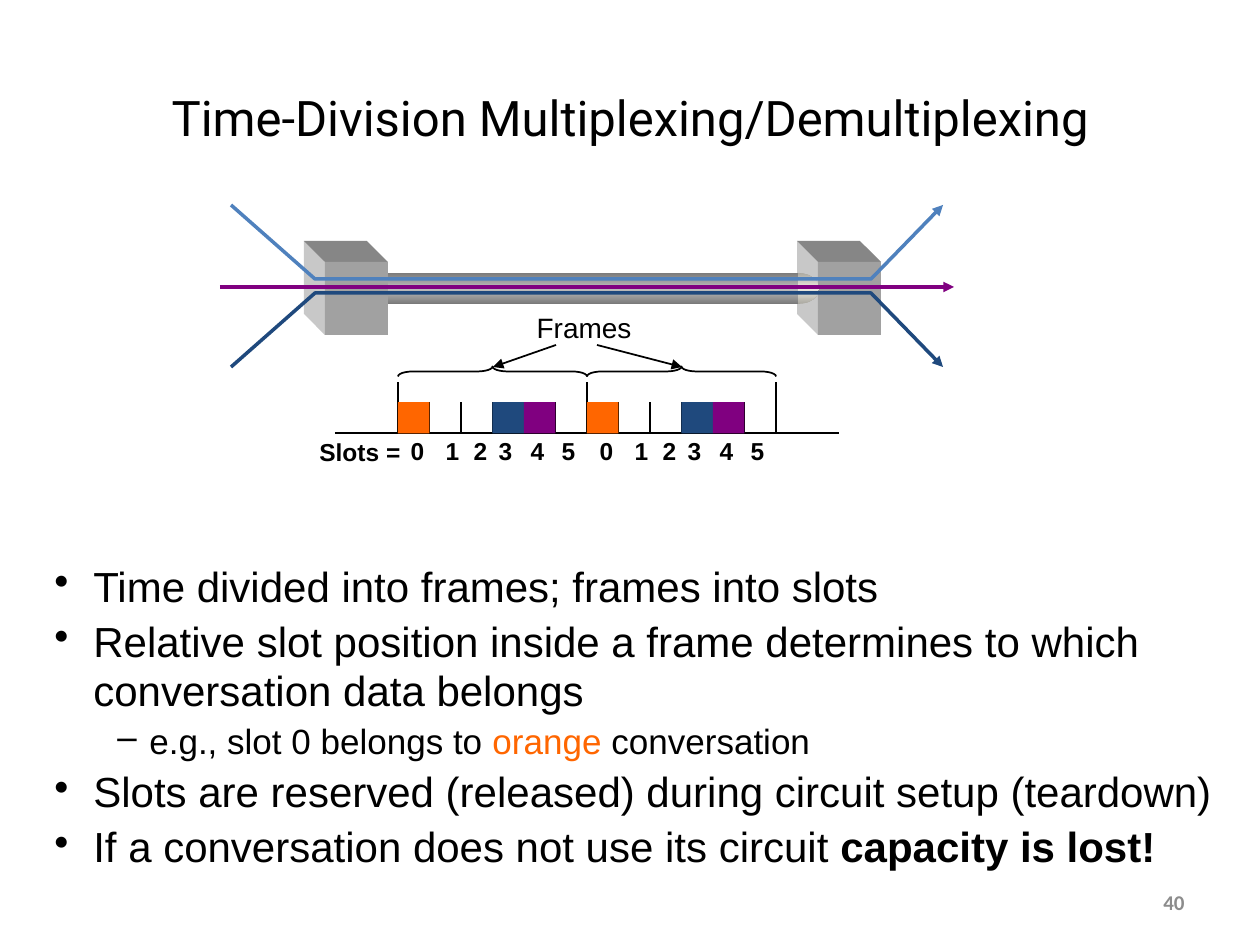
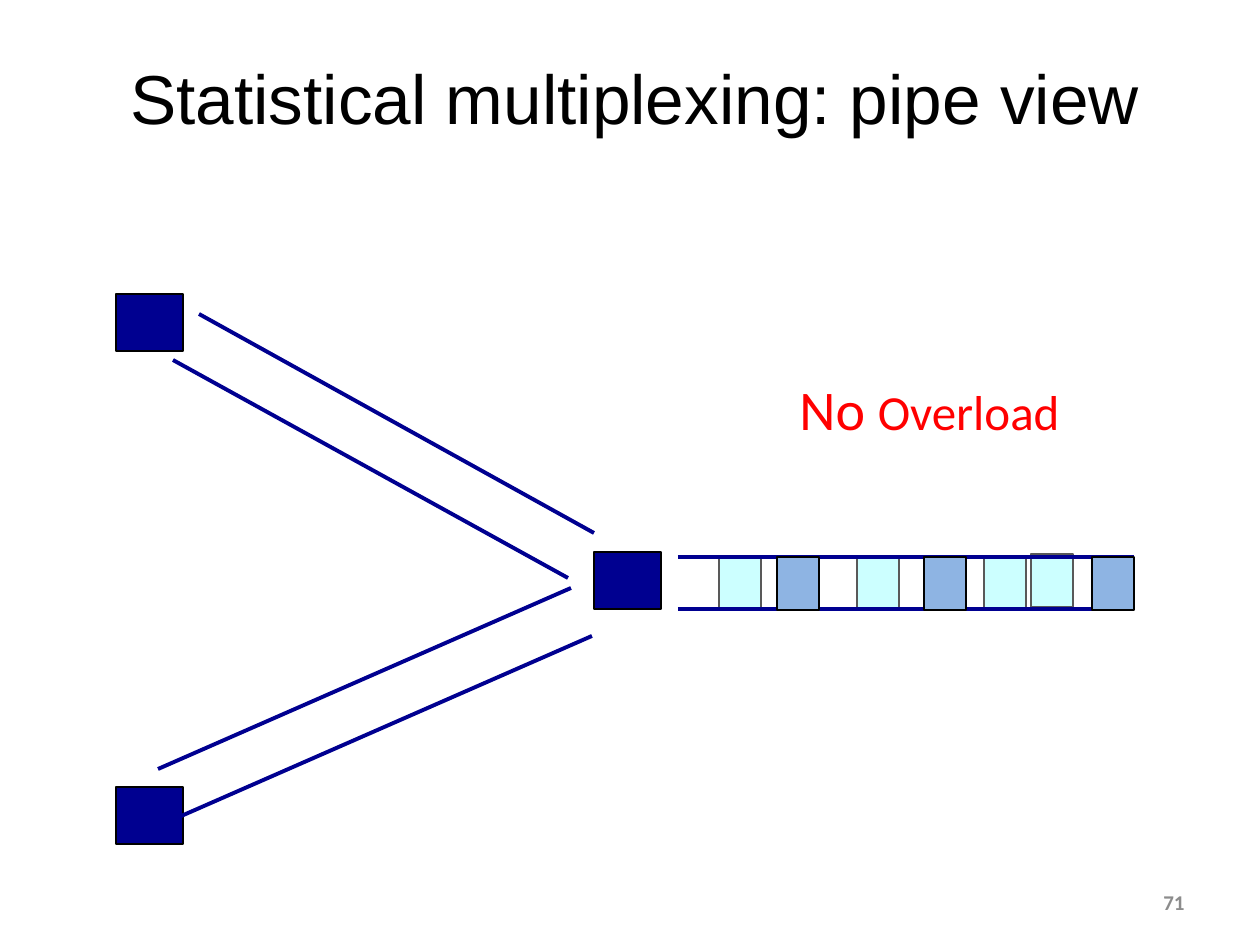
from lxml import etree
from pptx import Presentation
from pptx.dml.color import RGBColor
from pptx.enum.shapes import MSO_CONNECTOR, MSO_SHAPE
from pptx.enum.text import MSO_ANCHOR, PP_ALIGN
from pptx.oxml.ns import qn
from pptx.util import Emu, Pt

PX = 914400 / 126
BLANK_LAYOUT = 6
RECT, OVAL, BRACE = MSO_SHAPE.RECTANGLE, MSO_SHAPE.OVAL, MSO_SHAPE.LEFT_BRACE
STRAIGHT = MSO_CONNECTOR.STRAIGHT
LEFT, CENTER, RIGHT = PP_ALIGN.LEFT, PP_ALIGN.CENTER, PP_ALIGN.RIGHT
TOP, MIDDLE = MSO_ANCHOR.TOP, MSO_ANCHOR.MIDDLE

COLORS = {
    "black": "000000", "number": "8C8C8C", "red": "FF0000",
    "orange": "FF6600", "purple": "800080", "blue": "4F81BD",
    "dark blue": "1F497D", "navy": "000090",
    "cyan": "CCFFFF", "cyan edge": "595959", "sky": "8EB4E3",
    "cube front": "A1A1A1", "cube side": "C8C8C8", "cube top": "868686",
    "pipe edge": "7A7A7A", "pipe middle": "C0C0C0",
    "end edge": "AAA8A0", "end middle": "EEECE1",
}


def px(length):
    return Emu(round(length * PX))


def rgb(name):
    return RGBColor.from_string(COLORS[name])


# Elements
def style_line(shape, color, width, arrow=False):
    if color is None:
        shape.line.fill.background()
        return
    shape.line.color.rgb = rgb(color)
    shape.line.width = Pt(width)
    if arrow:
        outline = shape._element.spPr.find(qn("a:ln"))
        etree.SubElement(outline, qn("a:tailEnd"), type="triangle")


def add_line(page, start, end, color="black", width=1, arrow=False):
    line = page.shapes.add_connector(STRAIGHT, *map(px, start + end))
    style_line(line, color, width, arrow)
    etree.SubElement(line._element.spPr, qn("a:effectLst"))


def add_box(page, kind, area, fill=None, edge=None, width=0.75):
    box = page.shapes.add_shape(kind, *map(px, area))
    box.shadow.inherit = False
    if fill:
        box.fill.solid()
        box.fill.fore_color.rgb = rgb(fill)
    else:
        box.fill.background()
    style_line(box, edge, width)
    return box


def add_tube(page, kind, area, edge, middle):
    """Shape shaded from edge colour to middle colour and back."""
    tube = add_box(page, kind, area)
    tube.fill.gradient()
    tube.fill.gradient_angle = 90
    stops = tube._element.spPr.find(qn("a:gradFill")).find(qn("a:gsLst"))
    stops.clear()
    for position, name in ((0, edge), (50000, middle), (100000, edge)):
        stop = etree.SubElement(stops, qn("a:gs"), pos=str(position))
        etree.SubElement(stop, qn("a:srgbClr"), val=COLORS[name])


def add_outline(page, points, fill=None, edge=None, arrow=False):
    builder = page.shapes.build_freeform(*points[0], scale=PX)
    builder.add_line_segments(points[1:], close=fill is not None)
    outline = builder.convert_to_shape()
    outline.shadow.inherit = False
    if fill:
        outline.fill.solid()
        outline.fill.fore_color.rgb = rgb(fill)
    else:
        outline.fill.background()
    style_line(outline, edge, 2, arrow)


def add_cube(page, x, y):
    width, height, depth = 63, 73, 21
    back_x, back_y = x - depth, y - depth
    add_outline(page, [(x, y), (back_x, back_y), (back_x, back_y + height),
                       (x, y + height)], "cube side")
    add_outline(page, [(x, y), (back_x, back_y), (back_x + width, back_y),
                       (x + width, y)], "cube top")
    add_box(page, RECT, (x, y, width, height), "cube front")


def set_font(font, size, name, color="black", bold=False):
    font.size = Pt(size)
    font.name = name
    font.color.rgb = rgb(color)
    font.bold = bold


def add_frame(page, area, anchor=TOP, wrap=True):
    frame = page.shapes.add_textbox(*map(px, area)).text_frame
    frame.word_wrap = wrap
    frame.vertical_anchor = anchor
    return frame


def add_text(page, area, text, size, name, color="black", bold=False,
             align=CENTER, anchor=TOP, wrap=True):
    para = add_frame(page, area, anchor, wrap).paragraphs[0]
    para.text = text
    para.alignment = align
    set_font(para.font, size, name, color, bold)
    return para


def add_bullets(page, area, items):
    """Each item is (level, spans); a span is (text, colour, bold)."""
    frame = add_frame(page, area)
    for index, (level, spans) in enumerate(items):
        para = frame.add_paragraph() if index else frame.paragraphs[0]
        size, margin, hang, mark = ((24, 39, 39, "•"), (20, 95, 32, "–"))[level]
        para.level = level
        para.alignment = LEFT
        para.line_spacing = 0.97
        para.space_before = Pt(3.4)
        properties = para._p.get_or_add_pPr()
        properties.set("marL", str(px(margin)))
        properties.set("indent", str(-px(hang)))
        etree.SubElement(properties, qn("a:buChar"), char=mark)
        set_font(para.font, size, "Arial")
        for text, color, bold in spans:
            span = para.add_run()
            span.text = text
            if color != "black":
                span.font.color.rgb = rgb(color)
            if bold:
                span.font.bold = True


def add_page(deck, title, area, size, name, number):
    page = deck.slides.add_slide(deck.slide_layouts[BLANK_LAYOUT])
    add_text(page, area, title, size, name, anchor=MIDDLE)
    add_text(page, (903, 877, 294, 50), number, 12, "Calibri", "number", True,
             RIGHT, MIDDLE)
    return page


# Time-division slide
def draw_shared_pipe(page):
    add_cube(page, 818, 262)
    add_tube(page, OVAL, (777, 273, 42, 31), "end edge", "end middle")
    add_tube(page, RECT, (367, 273, 431, 31), "pipe edge", "pipe middle")
    add_cube(page, 325, 262)
    for outer_y, inner_y, color in ((205, 279, "blue"), (367, 293, "dark blue")):
        add_outline(page, [(231, outer_y), (315, inner_y), (871, inner_y),
                           (943, outer_y)], edge=color, arrow=True)
    add_line(page, (220, 287), (954, 287), "purple", 2, True)


def draw_frames(page):
    left, base, slot, slots = 398, 433, 31.5, 6
    frame_width = slot * slots
    add_line(page, (335, base), (839, base))
    for tick in range(2 * slots + 1):
        x = left + tick * slot
        add_line(page, (x, base), (x, 382 if tick % slots == 0 else 402))
    add_text(page, (304, 431, 112, 42), "Slots =", 14, "Arial", bold=True,
             wrap=False)
    add_text(page, (524, 304, 120, 45), "Frames", 16, "Arial", wrap=False)
    for start_x in (left, left + frame_width):
        for position, color in ((0, "orange"), (3, "dark blue"), (4, "purple")):
            add_box(page, RECT, (start_x + position * slot, 402, slot, slot), color)
        brace = add_box(page, BRACE, (start_x + frame_width / 2 - 5, 277, 10,
                                      frame_width), edge="black", width=1)
        brace.rotation = 90
        brace.adjustments[0] = 1.498
        for digit, offset in enumerate((0, 35, 63, 88, 120, 151)):
            add_text(page, (start_x + offset, 430, 39, 42), str(digit), 14,
                     "Arial", bold=True, wrap=False)
    add_line(page, (556, 345), (493, 367), arrow=True)
    add_line(page, (597, 345), (682, 367), arrow=True)


def build_time_division(deck):
    page = add_page(deck, "Time-Division Multiplexing/Demultiplexing",
                    (63, 38, 1134, 157), 28, "Roboto", "40")
    add_bullets(page, (42, 557, 1197, 335), [
        (0, [("Time divided into frames; frames into slots", "black", False)]),
        (0, [("Relative slot position inside a frame determines to which "
              "conversation data belongs", "black", False)]),
        (1, [("e.g., slot 0 belongs to ", "black", False),
             ("orange", "orange", False),
             (" conversation", "black", False)]),
        (0, [("Slots are reserved (released) during circuit setup (teardown)",
              "black", False)]),
        (0, [("If a conversation does not use its circuit ", "black", False),
             ("capacity is lost!", "black", True)]),
    ])
    draw_shared_pipe(page)
    draw_frames(page)


# Statistical multiplexing slide
def draw_stream(page, left, packets, fill, edge):
    for y in (557, 609):
        add_line(page, (left, y), (left + 451, y), "navy", 2.25)
    for x, y in packets:
        add_box(page, RECT, (x, y, 42, 53), fill, edge)


def build_pipe_view(deck):
    page = add_page(deck, "Statistical multiplexing: pipe view",
                    (63, 16, 1144, 161), 39.6, "Arial", "71")
    for x, y in ((594, 552), (116, 294), (116, 787)):
        add_box(page, RECT, (x, y, 67, 57), "navy", "black")
    for start, end in (((199, 314), (594, 533)), ((173, 360), (568, 578)),
                       ((158, 769), (571, 588)), ((179, 817), (592, 636))):
        add_line(page, start, end, "navy", 2.25)
    draw_stream(page, 678, [(1031, 554), (984, 556), (857, 557), (719, 557)],
                "cyan", "cyan edge")
    draw_stream(page, 683, [(777, 557), (1092, 557), (924, 557)], "sky", "black")
    para = add_text(page, (714, 368, 431, 81), "No ", 32, "Calibri", "red")
    span = para.add_run()
    span.text = "Overload"
    span.font.size = Pt(28)


def main():
    deck = Presentation()
    deck.slide_width, deck.slide_height = px(1260), px(945)
    build_time_division(deck)
    build_pipe_view(deck)
    deck.save("out.pptx")


if __name__ == "__main__":
    main()
